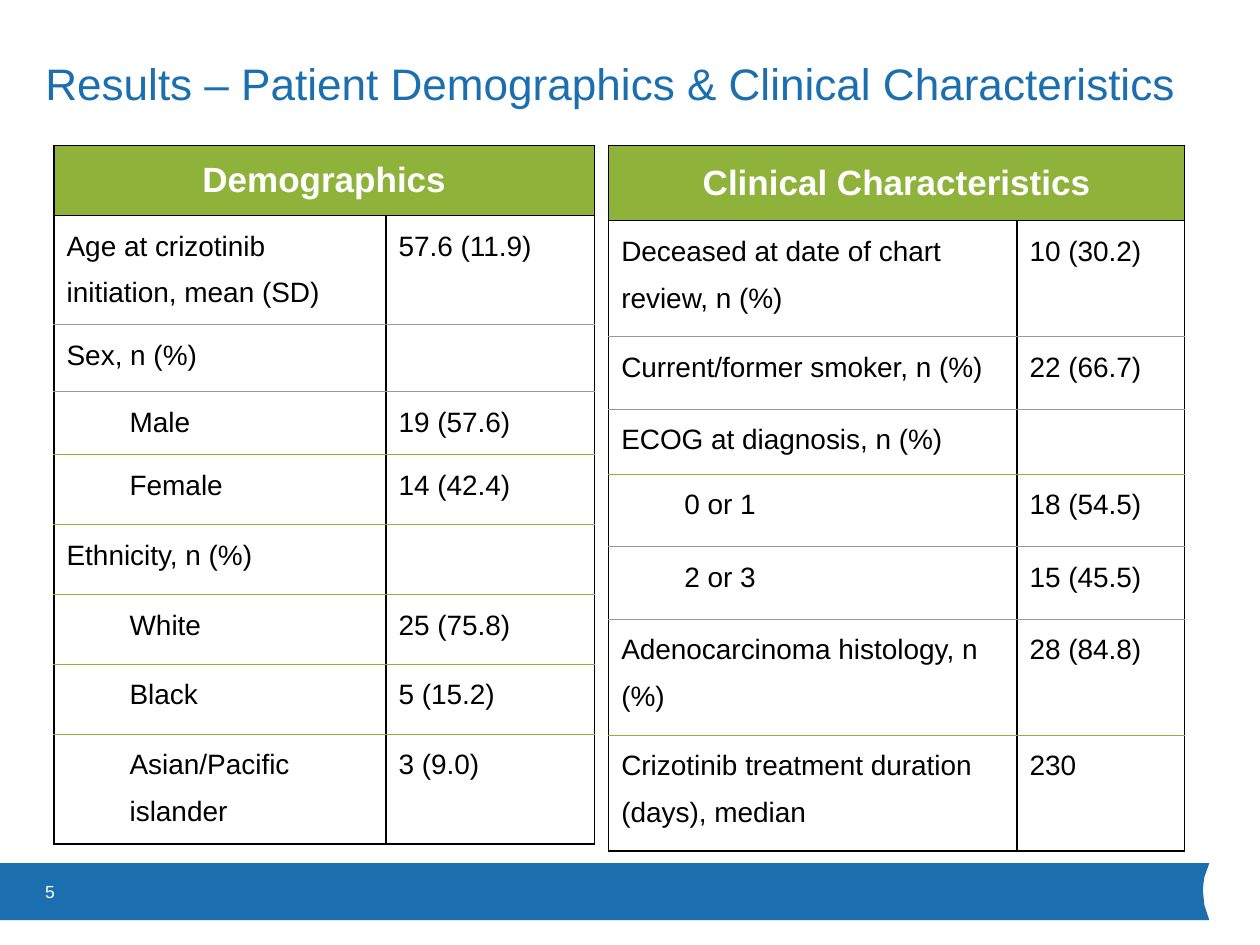
from lxml import etree
from pptx import Presentation
from pptx.dml.color import RGBColor
from pptx.enum.text import MSO_ANCHOR, PP_ALIGN
from pptx.oxml.ns import qn
from pptx.util import Cm, Pt

BLUE = RGBColor(0x1B, 0x6F, 0xAF)
GREEN = RGBColor(0x8F, 0xB3, 0x3A)
GREY = RGBColor(0x99, 0x99, 0x99)
BLACK = RGBColor(0, 0, 0)
WHITE = RGBColor(0xFF, 0xFF, 0xFF)


def add_text(paragraph, text, size, color, bold=False):
    run = paragraph.add_run()
    run.text = text
    run.font.name = "Arial"
    run.font.size = Pt(size)
    run.font.bold = bold
    run.font.color.rgb = color


def set_borders(cell, top, bottom):
    """Black sides; top and bottom lines in the given colours."""
    properties = cell._tc.get_or_add_tcPr()
    sides = (("lnL", BLACK), ("lnR", BLACK), ("lnT", top), ("lnB", bottom))
    for position, (side, color) in enumerate(sides):
        line = etree.Element(qn(f"a:{side}"))
        line.set("w", str(Pt(1 if color == BLACK else 0.75)))
        fill = etree.SubElement(line, qn("a:solidFill"))
        etree.SubElement(fill, qn("a:srgbClr")).set("val", str(color))
        properties.insert(position, line)


presentation = Presentation()
presentation.slide_width = Cm(25.4)
presentation.slide_height = Cm(19.05)
slide = presentation.slides.add_slide(presentation.slide_layouts[5])

# Footer band with a notched right end
band_points = [(24.38, 17.4), (24.28, 17.68), (24.26, 17.82), (24.25, 17.96),
               (24.28, 18.25), (24.38, 18.55), (0, 18.55)]
builder = slide.shapes.build_freeform(Cm(0), Cm(17.4))
builder.add_line_segments([(Cm(x), Cm(y)) for x, y in band_points], close=True)
band = builder.convert_to_shape()
band.shadow.inherit = False
band.fill.solid()
band.fill.fore_color.rgb = BLUE
band.line.fill.background()

# Slide number
number = slide.shapes.add_textbox(Cm(0.66), Cm(17.4), Cm(5.92), Cm(1.15))
number.text_frame.word_wrap = True
number.text_frame.vertical_anchor = MSO_ANCHOR.MIDDLE
add_text(number.text_frame.paragraphs[0], "5", 10, WHITE)

# Title
title = slide.shapes.title
title.left, title.top, title.width, title.height = Cm(0.66), Cm(0.38), Cm(23.57), Cm(2.57)
title.text_frame.vertical_anchor = MSO_ANCHOR.MIDDLE
title_paragraph = title.text_frame.paragraphs[0]
title_paragraph.alignment = PP_ALIGN.LEFT
add_text(title_paragraph, "Results – Patient Demographics & Clinical Characteristics", 25.2, BLUE)

# Table rows: label, value, indented, row height, colour of the line below
demographics = [
    ("Age at crizotinib initiation, mean (SD)", "57.6 (11.9)", False, 2.21, GREY),
    ("Sex, n (%)", "", False, 1.34, GREY),
    ("Male", "19 (57.6)", True, 1.27, GREEN),
    ("Female", "14 (42.4)", True, 1.41, GREEN),
    ("Ethnicity, n (%)", "", False, 1.41, GREEN),
    ("White", "25 (75.8)", True, 1.41, GREEN),
    ("Black", "5 (15.2)", True, 1.41, GREEN),
    ("Asian/Pacific islander", "3 (9.0)", True, 2.21, BLACK),
]
characteristics = [
    ("Deceased at date of chart review, n (%)", "10 (30.2)", False, 2.34, GREY),
    ("Current/former smoker, n (%)", "22 (66.7)", False, 1.46, GREY),
    ("ECOG at diagnosis, n (%)", "", False, 1.31, GREEN),
    ("0 or 1", "18 (54.5)", True, 1.46, GREY),
    ("2 or 3", "15 (45.5)", True, 1.46, GREY),
    ("Adenocarcinoma histology, n (%)", "28 (84.8)", False, 2.34, GREEN),
    ("Crizotinib treatment duration (days), median", "230", False, 2.34, BLACK),
]
# Heading, left edge, column widths, header height, rows
tables = [
    ("Demographics", 1.09, (6.69, 4.2), 1.41, demographics),
    ("Clinical Characteristics", 12.27, (8.23, 3.38), 1.52, characteristics),
]

for heading, left, widths, header_height, rows in tables:
    height = header_height + sum(row[3] for row in rows)
    frame = slide.shapes.add_table(len(rows) + 1, 2, Cm(left), Cm(2.93), Cm(sum(widths)), Cm(height))
    table = frame.table
    table.first_row = table.horz_banding = False
    for column, width in zip(table.columns, widths):
        column.width = Cm(width)

    # Header across both columns
    table.rows[0].height = Cm(header_height)
    header = table.cell(0, 0)
    header.merge(table.cell(0, 1))
    header.vertical_anchor = MSO_ANCHOR.MIDDLE
    header.text_frame.paragraphs[0].alignment = PP_ALIGN.CENTER
    add_text(header.text_frame.paragraphs[0], heading, 20, WHITE, bold=True)
    for cell in table.rows[0].cells:
        cell.fill.solid()
        cell.fill.fore_color.rgb = GREEN
        set_borders(cell, BLACK, BLACK)

    # Body
    line_above = BLACK
    for index, (label, value, indented, row_height, line_below) in enumerate(rows, start=1):
        table.rows[index].height = Cm(row_height)
        for cell, text in zip(table.rows[index].cells, (label, value)):
            cell.margin_top = cell.margin_bottom = Cm(0)
            cell.fill.background()
            set_borders(cell, line_above, line_below)
            if not text:
                continue
            paragraph = cell.text_frame.paragraphs[0]
            paragraph.line_spacing = 1.5
            paragraph.space_before = Pt(6)
            if indented and text == label:
                paragraph._p.get_or_add_pPr().set("marL", str(Cm(1.27)))
            add_text(paragraph, text, 16, BLACK)
        line_above = line_below

presentation.save("out.pptx")
